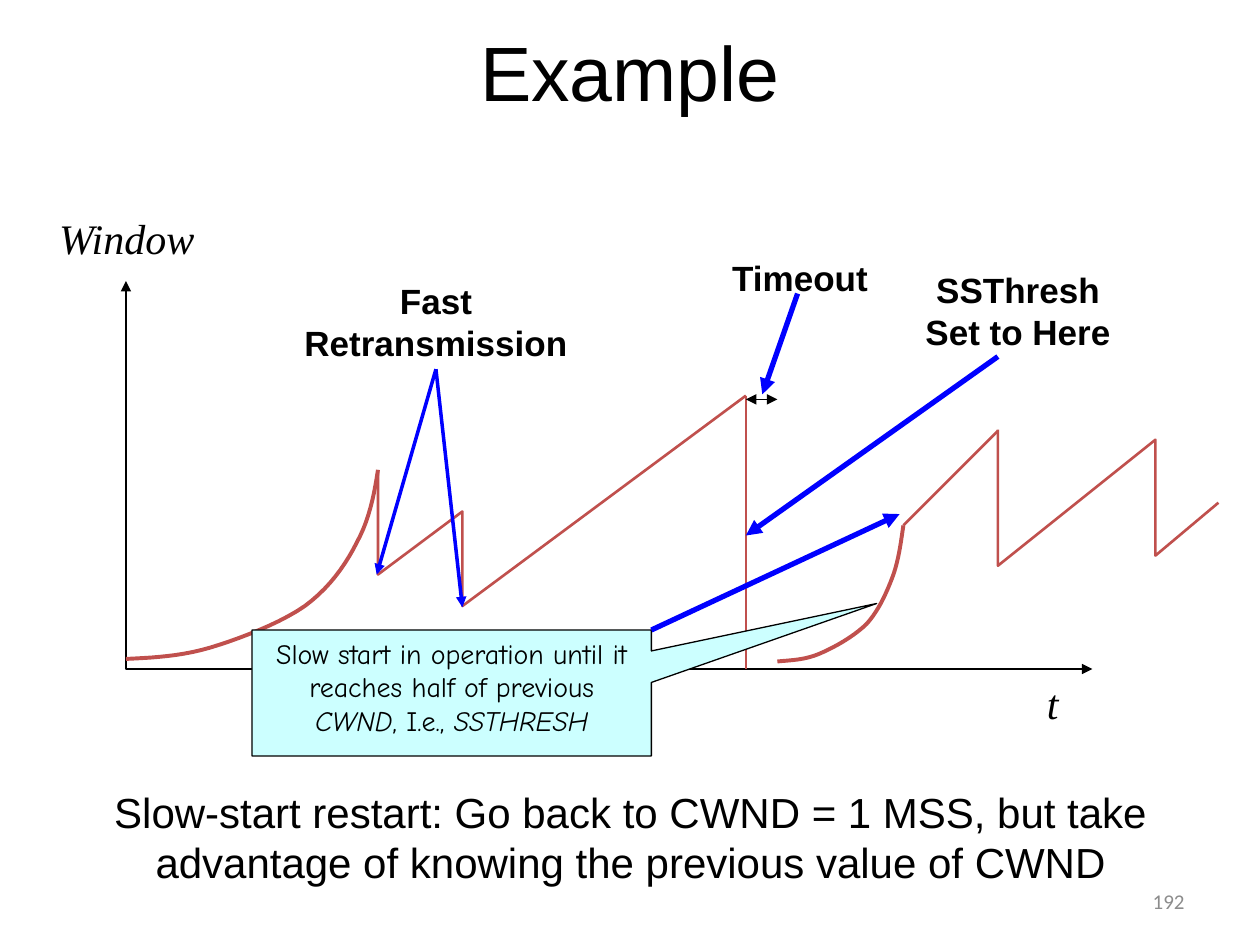
"""Build a slide on how the congestion window changes over time."""
from lxml import etree
from pptx import Presentation
from pptx.dml.color import RGBColor
from pptx.enum.shapes import MSO_CONNECTOR, MSO_SHAPE
from pptx.enum.text import MSO_ANCHOR, PP_ALIGN
from pptx.oxml.ns import qn
from pptx.util import Pt

PX = 9144
STEPS = 10
STRAIGHT = MSO_CONNECTOR.STRAIGHT
CALLOUT = MSO_SHAPE.RECTANGULAR_CALLOUT
TOP, MID = MSO_ANCHOR.TOP, MSO_ANCHOR.MIDDLE
LEFT, MIDDLE, RIGHT = PP_ALIGN.LEFT, PP_ALIGN.CENTER, PP_ALIGN.RIGHT
COLORS = {"ink": "000000", "trace": "C0504D", "arrow": "0000FF",
          "note": "CCFFFF", "page": "8C8C8C"}

TITLE = ("Example", (50, -8, 900, 128))
NOTE = [("Slow start in operation until it reaches half of previous ", False),
        ("CWND", True), (", I.e., ", False), ("SSTHRESH", True)]
NOTE_BOX, NOTE_TIP = (200, 500, 317, 100), (1.064, -0.71)

AXIS = {"color": "ink", "width": 1.5, "ends": ("headEnd", "tailEnd")}
SPAN = {**AXIS, "width": 0.75}
TRACE = {"color": "trace", "width": 1.5}
CURVE = {"color": "trace", "width": 2.25}
THIN = {"color": "arrow", "width": 2, "ends": ("tailEnd",)}
THICK = {**THIN, "width": 3}

START = [(300, 373), (297, 393), (293, 413), (283, 431), (274, 449),
         (261, 467), (242, 481), (222, 495), (190, 507), (167, 514),
         (143, 521), (122, 522), (100, 523)]
RESTART = [(717, 417), (715, 431), (713, 446), (708, 459), (703, 472),
           (697, 485), (688, 495), (678, 505), (662, 514), (650, 519),
           (638, 524), (627, 524), (617, 525)]

LABEL = {"size": 20, "bold": True, "align": MIDDLE}
SYMBOL = {"size": 24, "font": "Times New Roman", "italic": True, "wrap": False}
LABELS = [
    (["t"], (821, 533, 29, 50), SYMBOL),
    (["Window"], (37, 164, 129, 50), SYMBOL),
    (["Slow-start restart: Go back to CWND = 1 MSS, but take advantage of "
      "knowing the previous value of CWND"], (72, 619, 857, 91),
     {"size": 24, "align": MIDDLE}),
    (["Timeout"], (558, 199, 154, 43), LABEL),
    (["Fast Retransmission"], (217, 217, 258, 77), LABEL),
    (["SSThresh", "Set to Here"], (708, 208, 200, 77), LABEL),
    (["192"], (717, 695, 233, 40),
     {"size": 12, "font": "Calibri", "color": "page", "align": RIGHT,
      "anchor": MID}),
]


def bend(pts):
    """Turn a chain of cubic curves into points along it."""
    out = [pts[0]]
    for i in range(0, len(pts) - 1, 3):
        a, b, c, d = pts[i:i + 4]
        for n in range(1, STEPS + 1):
            t = n / STEPS
            u = 1 - t
            out.append(tuple(
                u**3 * p + 3 * u * u * t * q + 3 * u * t * t * r + t**3 * s
                for p, q, r, s in zip(a, b, c, d)))
    return out


UNDER = [
    ([(100, 223), (100, 531), (867, 531)], AXIS),
    (bend(START), CURVE),
    ([(300, 373), (300, 456), (367, 406), (367, 481), (592, 314)], TRACE),
    ([(592, 314), (592, 531)], TRACE),
    (bend(RESTART), CURVE),
]
OVER = [
    ([(792, 341), (792, 449), (917, 349), (917, 441), (967, 399)], TRACE),
    ([(717, 417), (792, 342)], TRACE),
    ([(517, 500), (714, 408)], THICK),
    ([(633, 233), (605, 313)], THICK),
    ([(592, 317), (617, 317)], SPAN),
    ([(346, 293), (299, 456)], THIN),
    ([(346, 293), (367, 482)], THIN),
    ([(792, 283), (592, 425)], THICK),
]


def emu(vals):
    return [round(v * PX) for v in vals]


def hue(name):
    return RGBColor.from_string(COLORS[name])


def write(frame, paras, size=20, font="Arial", color="ink", bold=False,
          italic=False, align=LEFT, anchor=TOP, wrap=True):
    """Fill a frame; a paragraph is a string or a list of (text, italic)."""
    frame.word_wrap = wrap
    frame.vertical_anchor = anchor
    for i, runs in enumerate(paras):
        para = frame.add_paragraph() if i else frame.paragraphs[0]
        para.alignment = align
        for text, slant in [(runs, italic)] if isinstance(runs, str) else runs:
            run = para.add_run()
            run.text = text
            face = run.font
            face.name, face.size = font, Pt(size)
            face.bold, face.italic = bold, slant
            face.color.rgb = hue(color)


def trace(shapes, pts, color, width, ends=()):
    """Draw a straight connector or an open outline through points."""
    if len(pts) == 2:
        shape = shapes.add_connector(STRAIGHT, *emu(pts[0] + pts[1]))
        etree.SubElement(shape._element.spPr, qn("a:effectLst"))
    else:
        form = shapes.build_freeform(*emu(pts[0]))
        form.add_line_segments([emu(p) for p in pts[1:]], close=False)
        shape = form.convert_to_shape()
        shape.fill.background()
        shape.shadow.inherit = False
    shape.line.color.rgb = hue(color)
    shape.line.width = Pt(width)
    ln = shape._element.spPr.find(qn("a:ln"))
    for end in ends:
        etree.SubElement(ln, qn("a:" + end), type="triangle")


def callout(shapes):
    """Draw the slow start note with its pointer."""
    shape = shapes.add_shape(CALLOUT, *emu(NOTE_BOX))
    for i, val in enumerate(NOTE_TIP):
        shape.adjustments[i] = val
    shape.shadow.inherit = False
    shape.fill.solid()
    shape.fill.fore_color.rgb = hue("note")
    shape.line.color.rgb = hue("ink")
    shape.line.width = Pt(0.75)
    write(shape.text_frame, [NOTE], size=16, font="Comic Neue", align=MIDDLE)


def main():
    deck = Presentation()
    deck.slide_width, deck.slide_height = emu((1000, 750))
    shapes = deck.slides.add_slide(deck.slide_layouts[5]).shapes
    title = shapes.title
    text, box = TITLE
    title.left, title.top, title.width, title.height = emu(box)
    write(title.text_frame, [text], size=44, align=MIDDLE, anchor=MID)
    for pts, style in UNDER:
        trace(shapes, pts, **style)
    callout(shapes)
    for pts, style in OVER:
        trace(shapes, pts, **style)
    for paras, box, style in LABELS:
        write(shapes.add_textbox(*emu(box)).text_frame, paras, **style)
    deck.save("out.pptx")


if __name__ == "__main__":
    main()
